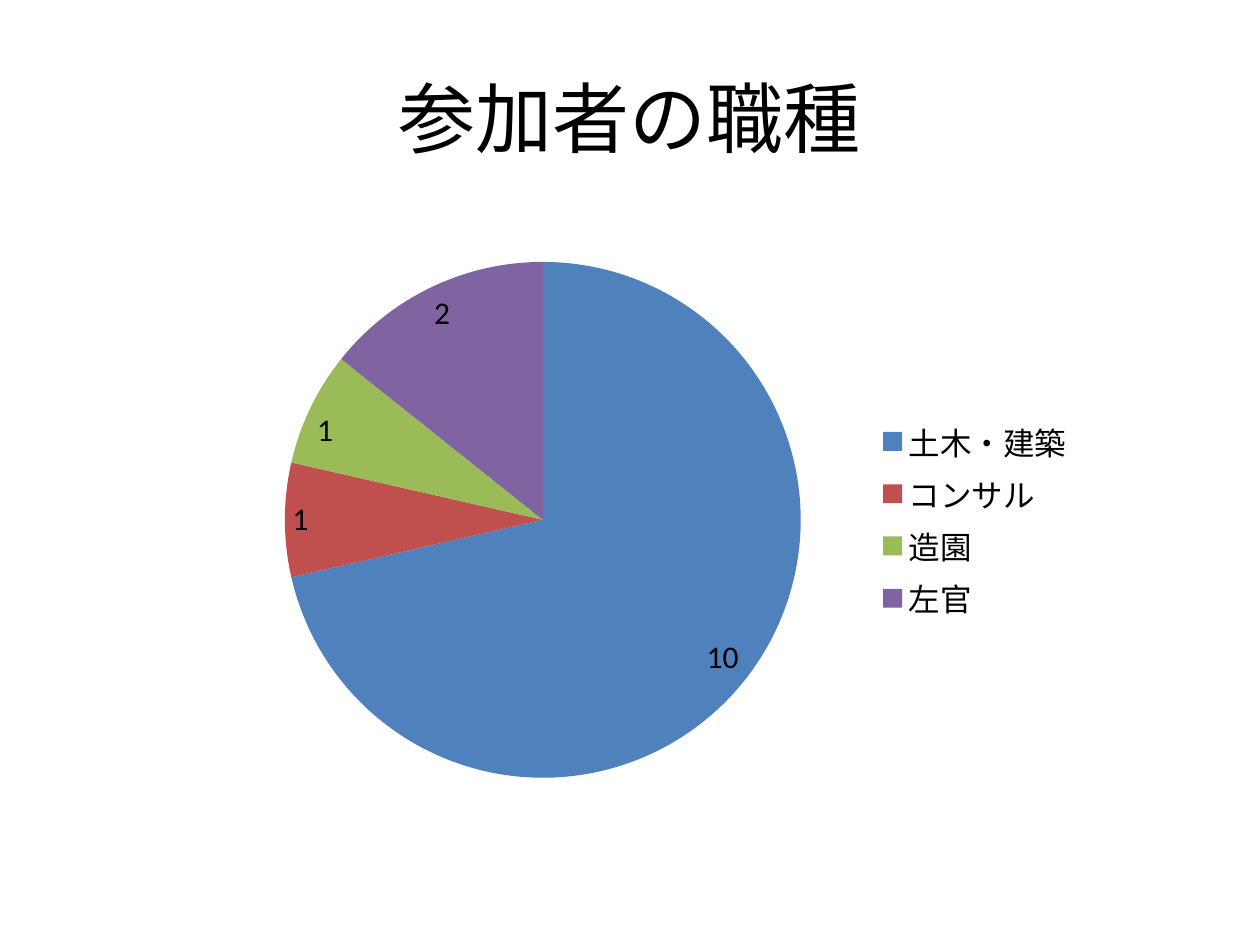
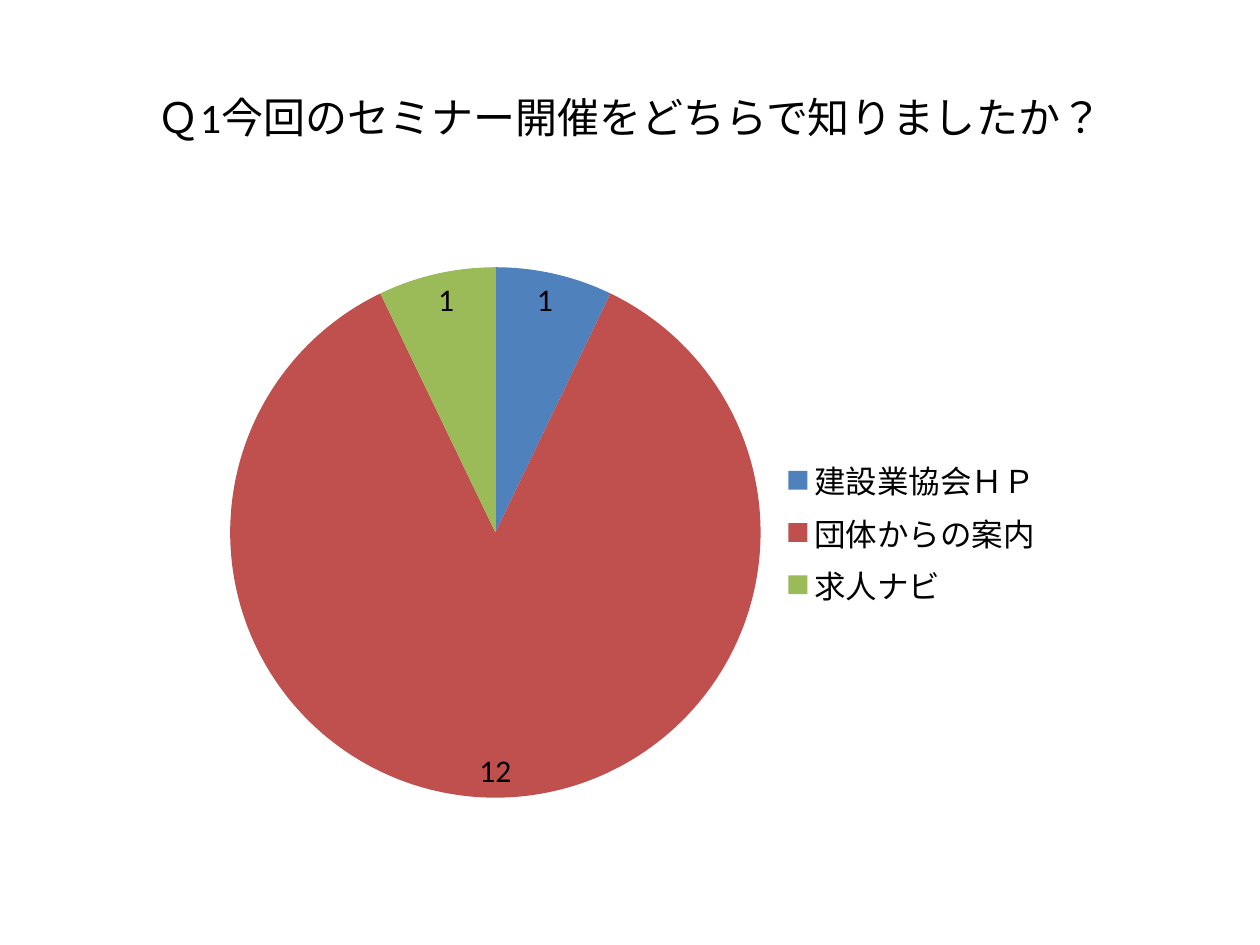
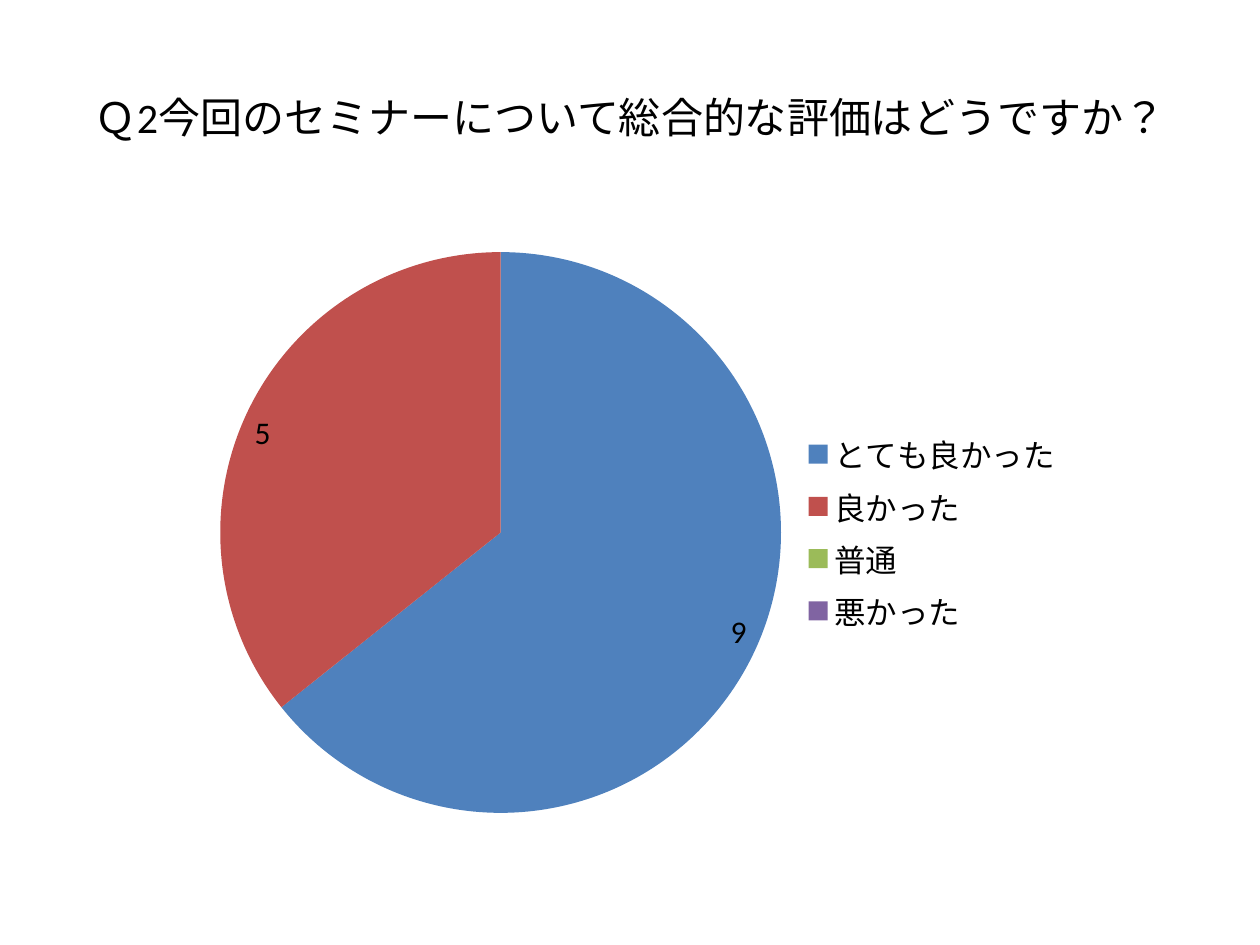
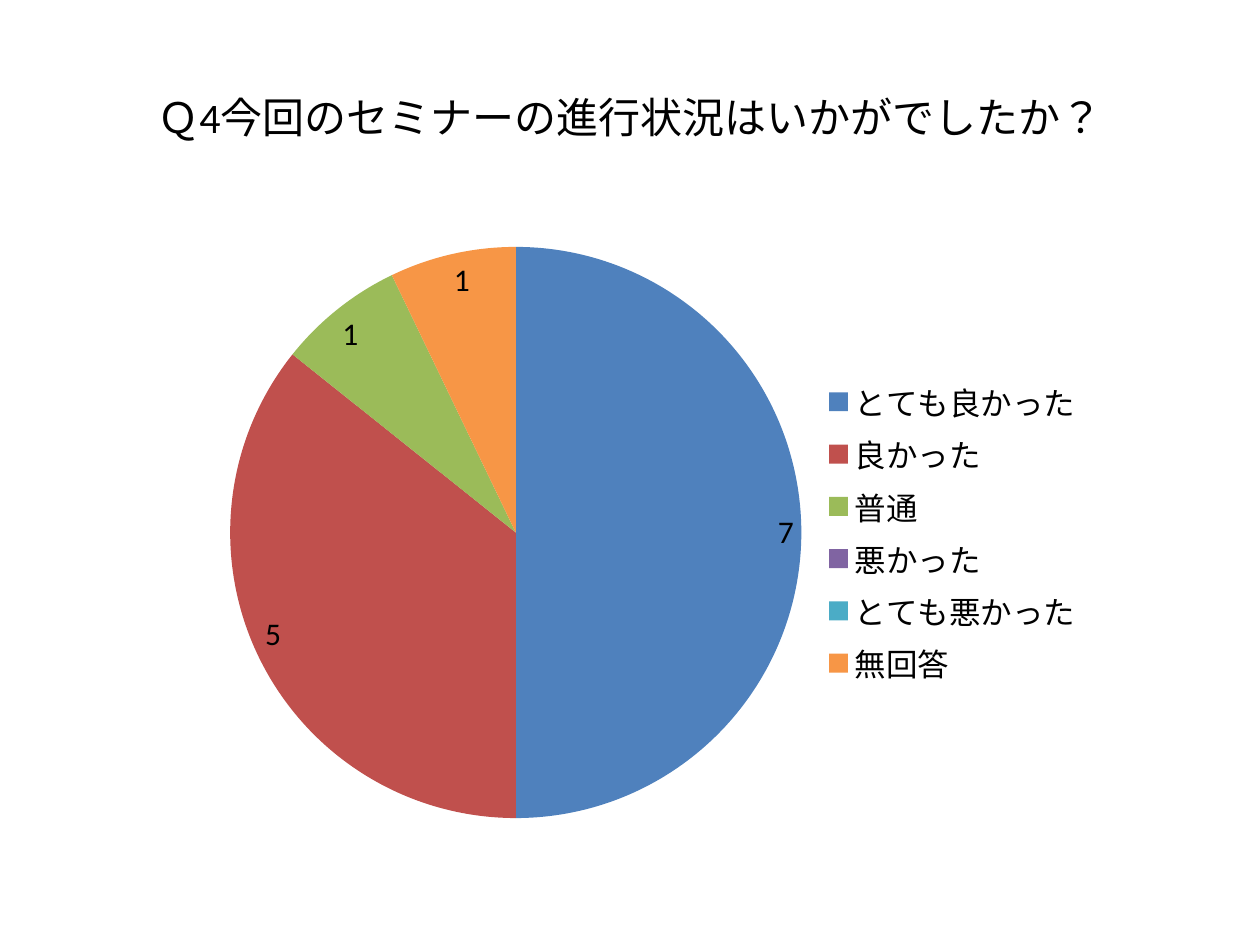
from pptx import Presentation
from pptx.chart.data import CategoryChartData
from pptx.dml.color import RGBColor
from pptx.enum.chart import XL_CHART_TYPE, XL_LABEL_POSITION, XL_LEGEND_POSITION
from pptx.enum.lang import MSO_LANGUAGE_ID
from pptx.enum.text import MSO_ANCHOR, PP_ALIGN
from pptx.util import Cm, Pt

COLORS = {
    "text": "000000",
    "background": "FFFFFF",
    "blue": "4F81BD",
    "red": "C0504D",
    "green": "9BBB59",
    "purple": "8064A2",
    "aqua": "4BACC6",
    "orange": "F79646",
}
SLICES = ["blue", "red", "green", "purple", "aqua", "orange"]
FONT = "Calibri"
JAPANESE_FONT = "Noto Sans CJK JP"


def color(name):
    return RGBColor.from_string(COLORS[name])


def format_font(font, size=18, name=FONT, fill="text"):
    font.size = Pt(size)
    font.name = name
    font.color.rgb = color(fill)


def write_text(box, text, align=PP_ALIGN.CENTER, anchor=MSO_ANCHOR.MIDDLE, **style):
    """Put one formatted paragraph into a box."""
    frame = box.text_frame
    frame.word_wrap = True
    frame.vertical_anchor = anchor
    para = frame.paragraphs[0]
    para.alignment = align
    span = para.add_run()
    span.text = text
    span.font.language_id = MSO_LANGUAGE_ID.JAPANESE
    format_font(span.font, **style)


class SurveyDeck:
    """Holds the shared style and the current page."""

    def __init__(self):
        self.deck = Presentation()
        self.deck.slide_width = Cm(25.4)
        self.deck.slide_height = Cm(19.05)
        self.page = None

    def add_page(self):
        self.page = self.deck.slides.add_slide(self.deck.slide_layouts[6])
        fill = self.page.background.fill
        fill.solid()
        fill.fore_color.rgb = color("background")

    def add_title(self, text, size=24):
        box = self.page.shapes.add_textbox(Cm(1.27), Cm(0.76), Cm(22.86), Cm(3.18))
        write_text(box, text, size=size)

    def add_pie(self, answers, left, top, width, height, legend_font=FONT):
        data = CategoryChartData()
        data.categories = list(answers)
        data.add_series("Series 1", list(answers.values()))
        chart = self.page.shapes.add_chart(
            XL_CHART_TYPE.PIE, Cm(left), Cm(top), Cm(width), Cm(height), data
        ).chart
        chart.has_title = False
        format_font(chart.font)

        # Legend
        chart.has_legend = True
        chart.legend.position = XL_LEGEND_POSITION.RIGHT
        chart.legend.include_in_layout = False
        format_font(chart.legend.font, name=legend_font)

        # Slices
        plot = chart.plots[0]
        plot.vary_by_categories = True
        for index, name in enumerate(SLICES[:len(answers)]):
            fill = plot.series[0].points[index].format.fill
            fill.solid()
            fill.fore_color.rgb = color(name)

        # Value labels, blank for zero
        plot.has_data_labels = True
        labels = plot.data_labels
        labels.show_value = True
        labels.show_percentage = False
        labels.number_format = "0;;;"
        labels.number_format_is_linked = False
        labels.position = XL_LABEL_POSITION.INSIDE_END
        format_font(labels.font)

    def save(self):
        self.deck.save("out.pptx")


def main():
    survey = SurveyDeck()

    # Occupations
    survey.add_page()
    survey.add_title("参加者の職種", size=44)
    survey.add_pie({"土木・建築": 10, "コンサル": 1, "造園": 1, "左官": 2},
                   left=4.29, top=4.93, width=17.63, height=11.1)

    # Question pages: title, answers, chart left and width, legend font
    questions = [
        ("Ｑ1今回のセミナー開催をどちらで知りましたか？",
         {"建設業協会ＨＰ": 1, "団体からの案内": 12, "求人ナビ": 1},
         4.29, 16.99, JAPANESE_FONT),
        ("Ｑ2今回のセミナーについて総合的な評価はどうですか？",
         {"とても良かった": 9, "良かった": 5, "普通": 0, "悪かった": 0},
         4.09, 17.6, FONT),
        ("Ｑ4今回のセミナーの進行状況はいかがでしたか？",
         {"とても良かった": 7, "良かった": 5, "普通": 1, "悪かった": 0,
          "とても悪かった": 0, "無回答": 1},
         4.29, 17.81, FONT),
    ]
    for title, answers, left, width, legend_font in questions:
        survey.add_page()
        survey.add_title(title)
        survey.add_pie(answers, left, top=4.45, width=width, height=12.57,
                       legend_font=legend_font)

    survey.save()


if __name__ == "__main__":
    main()
